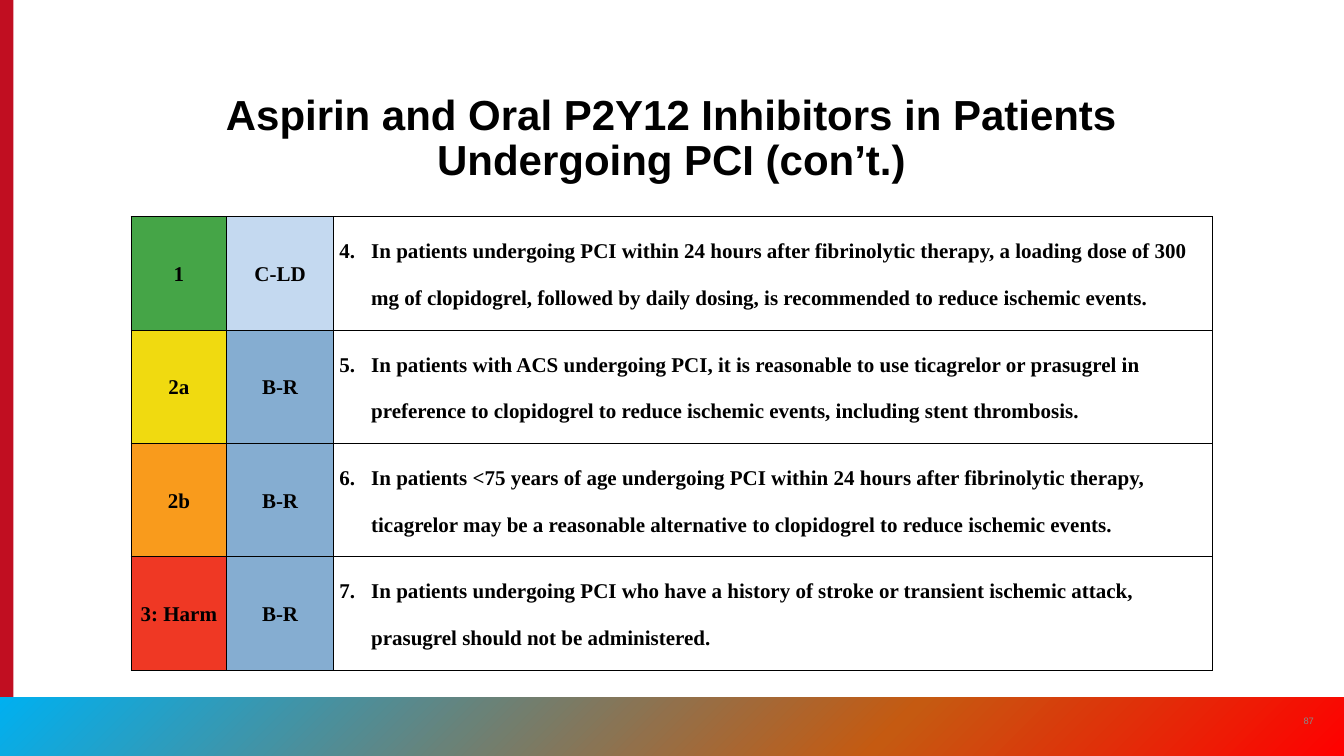
from lxml import etree
from pptx import Presentation
from pptx import util as u
from pptx.dml.color import RGBColor
from pptx.enum import shapes, text
from pptx.oxml import ns

COLORS = {
    "black": "000000", "gray": "8A8B8A", "crimson": "C10E21",
    "sky": "00B0F0", "rust": "C55A11", "red": "FF0000",
    "class 1": "45A547", "class 2a": "F0DA10",
    "class 2b": "F99B1C", "class 3: Harm": "EF3824",
    "level C-LD": "C4D9F0", "level B-R": "85ADD1",
}
FIRST_NUMBER = 4
RECOMMENDATIONS = [
    ("1", "C-LD", "In patients undergoing PCI within 24 hours after fibrinolytic therapy, "
     "a loading dose of 300 mg of clopidogrel, followed by daily dosing, is recommended "
     "to reduce ischemic events."),
    ("2a", "B-R", "In patients with ACS undergoing PCI, it is reasonable to use ticagrelor "
     "or prasugrel in preference to clopidogrel to reduce ischemic events, including "
     "stent thrombosis."),
    ("2b", "B-R", "In patients <75 years of age undergoing PCI within 24 hours after "
     "fibrinolytic therapy, ticagrelor may be a reasonable alternative to clopidogrel "
     "to reduce ischemic events."),
    ("3: Harm", "B-R", "In patients undergoing PCI who have a history of stroke or "
     "transient ischemic attack, prasugrel should not be administered."),
]


def rgb(name):
    return RGBColor.from_string(COLORS[name])


def add_xml(parent, tag, **attributes):
    return etree.SubElement(parent, ns.qn(tag), attributes)


def add_color(parent, name):
    return add_xml(parent, "a:srgbClr", val=COLORS[name])


def write(frame, words, size=18, font="Times New Roman", color="black", bold=True,
          align=text.PP_ALIGN.CENTER, spacing=1.0, number=None):
    paragraph = frame.paragraphs[0]
    if number is not None:
        properties = paragraph._p.get_or_add_pPr()
        properties.set("marL", str(u.Inches(0.38)))
        properties.set("indent", str(u.Inches(-0.38)))
        add_color(add_xml(properties, "a:buClr"), "black")
        add_xml(properties, "a:buAutoNum", type="arabicPeriod", startAt=str(number))
    paragraph.alignment = align
    paragraph.line_spacing = spacing
    run = paragraph.add_run()
    run.text = words
    run.font.size = u.Pt(size)
    run.font.name = font
    run.font.bold = bold
    run.font.color.rgb = rgb(color)


class SlideBuilder:
    def __init__(self, slide):
        self.slide = slide

    def rectangle(self, left, top, width, height):
        shape = self.slide.shapes.add_shape(
            shapes.MSO_SHAPE.RECTANGLE, *map(u.Inches, (left, top, width, height)))
        shape.shadow.inherit = False
        shape.line.fill.background()
        return shape

    def bar(self, *box, color):
        fill = self.rectangle(*box).fill
        fill.solid()
        fill.fore_color.rgb = rgb(color)

    def gradient_bar(self, *box, stops):
        shape = self.rectangle(*box)
        shape.fill.gradient()
        shape.fill.gradient_angle = 315
        stop_list = shape._element.spPr.find(".//" + ns.qn("a:gsLst"))
        for old_stop in list(stop_list):
            stop_list.remove(old_stop)
        for percent, color in stops:
            add_color(add_xml(stop_list, "a:gs", pos=str(percent * 1000)), color)

    def text_box(self, *box, words, anchor, **style):
        frame = self.slide.shapes.add_textbox(*map(u.Inches, box)).text_frame
        frame.word_wrap = True
        frame.vertical_anchor = anchor
        write(frame, words, font="Arial", **style)

    def table(self, left, top, column_widths, row_height, rows):
        shape = self.slide.shapes.add_table(
            len(rows), len(column_widths), u.Inches(left), u.Inches(top),
            u.Inches(sum(column_widths)), u.Inches(row_height * len(rows)))
        table = shape.table
        table.first_row = table.horz_banding = False
        for column, width in zip(table.columns, column_widths):
            column.width = u.Inches(width)
        for index, (grade, level, advice) in enumerate(rows):
            table.rows[index].height = u.Inches(row_height)
            self.cell(table.cell(index, 0), grade, fill="class " + grade, spacing=1.07)
            self.cell(table.cell(index, 1), level, fill="level " + level, spacing=1.07)
            self.cell(table.cell(index, 2), advice, anchor=text.MSO_ANCHOR.TOP,
                      align=text.PP_ALIGN.LEFT, spacing=2.0, number=FIRST_NUMBER + index)

    def cell(self, cell, words, fill=None, anchor=text.MSO_ANCHOR.MIDDLE, **style):
        cell.margin_left = cell.margin_right = u.Inches(0.07)
        cell.margin_top = cell.margin_bottom = 0
        cell.vertical_anchor = anchor
        properties = cell._tc.get_or_add_tcPr()
        for side in ("a:lnL", "a:lnR", "a:lnT", "a:lnB"):
            border = add_xml(properties, side, w=str(u.Pt(1)))
            add_color(add_xml(border, "a:solidFill"), "black")
        if fill:
            cell.fill.solid()
            cell.fill.fore_color.rgb = rgb(fill)
        else:
            cell.fill.background()
        write(cell.text_frame, words, **style)


def main():
    presentation = Presentation()
    presentation.slide_width = u.Inches(16)
    presentation.slide_height = u.Inches(9)
    builder = SlideBuilder(presentation.slides.add_slide(presentation.slide_layouts[6]))

    # Side and bottom bands
    builder.bar(0, 0, 0.16, 9, color="crimson")
    builder.gradient_bar(0, 8.3, 16, 0.7,
                         stops=[(0, "sky"), (66, "rust"), (100, "red")])

    # Page number
    builder.text_box(15.34, 8.34, 0.48, 0.48, words="87", size=8, color="gray",
                     bold=False, anchor=text.MSO_ANCHOR.MIDDLE)

    # Title
    builder.text_box(2.54, 1, 10.91, 1.25, size=36, spacing=0.9,
                     anchor=text.MSO_ANCHOR.BOTTOM,
                     words="Aspirin and Oral P2Y12 Inhibitors in Patients "
                           "Undergoing PCI (con’t.)")

    # Recommendations: class, level of evidence, advice
    builder.table(1.56, 2.58, (1.14, 1.27, 10.46), 1.35, RECOMMENDATIONS)

    presentation.save("out.pptx")


if __name__ == "__main__":
    main()
